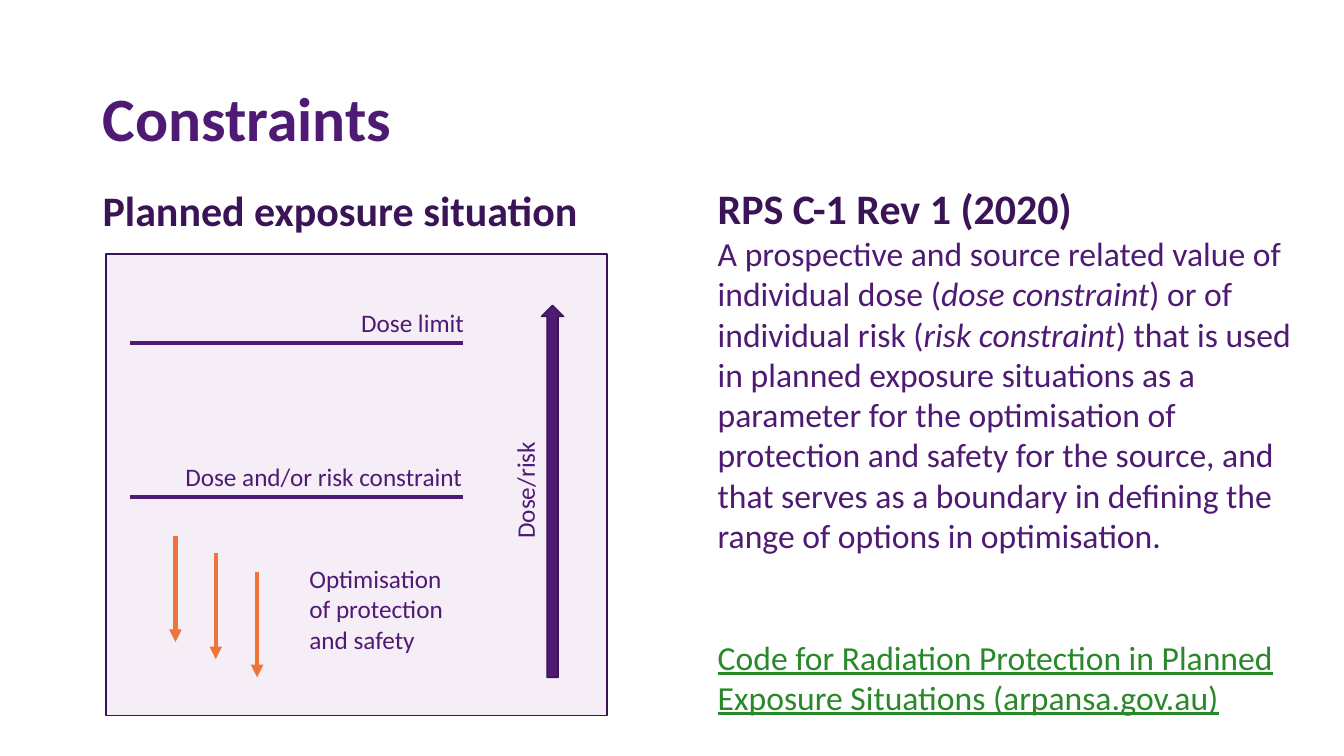
from pptx import Presentation
from pptx.dml.color import RGBColor
from pptx.enum.shapes import MSO_CONNECTOR, MSO_SHAPE
from pptx.enum.text import MSO_ANCHOR, PP_ALIGN
from pptx.oxml.ns import qn
from pptx.util import Emu, Pt
from lxml.etree import SubElement

EMU_PER_PX = 9144
PURPLE = "4E1A74"
DARK_PURPLE = "3B1457"
OUTLINE = "3A1356"
PANEL = "F5EEF6"
ORANGE = "EE7437"
LINK_GREEN = "298829"


def px(length):
    return Emu(length * EMU_PER_PX)


def color(value):
    return RGBColor.from_string(value)


class SlideBuilder:
    """Holds the text style and the current slide, and draws its elements."""

    def __init__(self, slide, font_name="Calibri"):
        self.slide = slide
        self.font_name = font_name

    def style(self, font, size, fill, bold=False):
        font.name = self.font_name
        font.size = Pt(size)
        font.bold = bold
        font.color.rgb = color(fill)

    def text_box(self, left, top, width, height, anchor=MSO_ANCHOR.TOP, rotation=0):
        shape = self.slide.shapes.add_textbox(px(left), px(top), px(width), px(height))
        shape.rotation = rotation
        shape.text_frame.word_wrap = True
        shape.text_frame.vertical_anchor = anchor
        return shape.text_frame

    def paragraph(self, frame, text, size, fill=PURPLE, bold=False, first=False):
        paragraph = frame.paragraphs[0] if first else frame.add_paragraph()
        self.style(paragraph.font, size, fill, bold)
        for index, part in enumerate(text.split("*")):
            run = paragraph.add_run()
            run.text = part
            if index % 2:
                run.font.italic = True
        return paragraph

    def heading(self, text, box, size, fill, anchor=MSO_ANCHOR.TOP):
        frame = self.text_box(*box, anchor=anchor)
        paragraph = self.paragraph(frame, text, size, fill, bold=True, first=True)
        paragraph.line_spacing = 1.1

    def label(self, text, box, align=PP_ALIGN.LEFT, rotation=0):
        frame = self.text_box(*box, rotation=rotation)
        self.paragraph(frame, text, 18, first=True).alignment = align

    def block(self, kind, left, top, width, height, fill):
        shape = self.slide.shapes.add_shape(
            kind, px(left), px(top), px(width), px(height))
        shape.shadow.inherit = False
        shape.fill.solid()
        shape.fill.fore_color.rgb = color(fill)
        shape.line.color.rgb = color(OUTLINE)
        shape.line.width = Pt(1)

    def line(self, start_x, start_y, end_x, end_y, fill, arrow=False):
        connector = self.slide.shapes.add_connector(
            MSO_CONNECTOR.STRAIGHT, px(start_x), px(start_y), px(end_x), px(end_y))
        connector.line.color.rgb = color(fill)
        connector.line.width = Pt(3)
        properties = connector._element.spPr
        if arrow:
            SubElement(properties.find(qn("a:ln")), qn("a:tailEnd"), type="triangle")
        SubElement(properties, qn("a:effectLst"))


def draw_diagram(builder):
    builder.block(MSO_SHAPE.RECTANGLE, 105, 252, 497, 458, PANEL)
    for level in (340, 493):
        builder.line(129, level, 459, level, PURPLE)
    for x, top in ((174, 532), (214, 549), (255, 567)):
        builder.line(x, top, x, top + 105, ORANGE, arrow=True)
    builder.label("Optimisation of protection and safety", (297, 554, 161, 101))
    builder.label("Dose and/or risk constraint", (174, 453, 300, 40))
    builder.label("Dose limit", (219, 300, 251, 40), PP_ALIGN.RIGHT)
    builder.block(MSO_SHAPE.UP_ARROW, 537, 303, 22, 369, PURPLE)
    builder.label("Dose/risk", (395, 534, 251, 40), PP_ALIGN.RIGHT, rotation=270)


def draw_definition(builder):
    frame = builder.text_box(702, 176, 591, 545)
    builder.paragraph(frame, "RPS C-1 Rev 1 (2020)", 30, DARK_PURPLE,
                      bold=True, first=True)
    builder.paragraph(
        frame,
        "A prospective and source related value of individual dose "
        "(*dose constraint*) or of individual risk (*risk constraint*) that is "
        "used in planned exposure situations as a parameter for the optimisation "
        "of protection and safety for the source, and that serves as a boundary "
        "in defining the range of options in optimisation.", 24)
    reference = builder.paragraph(
        frame,
        "Code for Radiation Protection in Planned Exposure Situations "
        "(arpansa.gov.au)", 24, LINK_GREEN)
    reference.font.underline = True
    reference.space_before = Pt(58)


def main():
    presentation = Presentation()
    presentation.slide_width = px(1333)
    presentation.slide_height = px(750)
    slide = presentation.slides.add_slide(presentation.slide_layouts[6])
    builder = SlideBuilder(slide)
    builder.heading("Constraints", (92, 40, 1150, 145), 44, PURPLE,
                    MSO_ANCHOR.MIDDLE)
    builder.heading("Planned exposure situation", (92, 173, 567, 60), 30,
                    DARK_PURPLE)
    draw_diagram(builder)
    draw_definition(builder)
    presentation.save("out.pptx")


if __name__ == "__main__":
    main()
